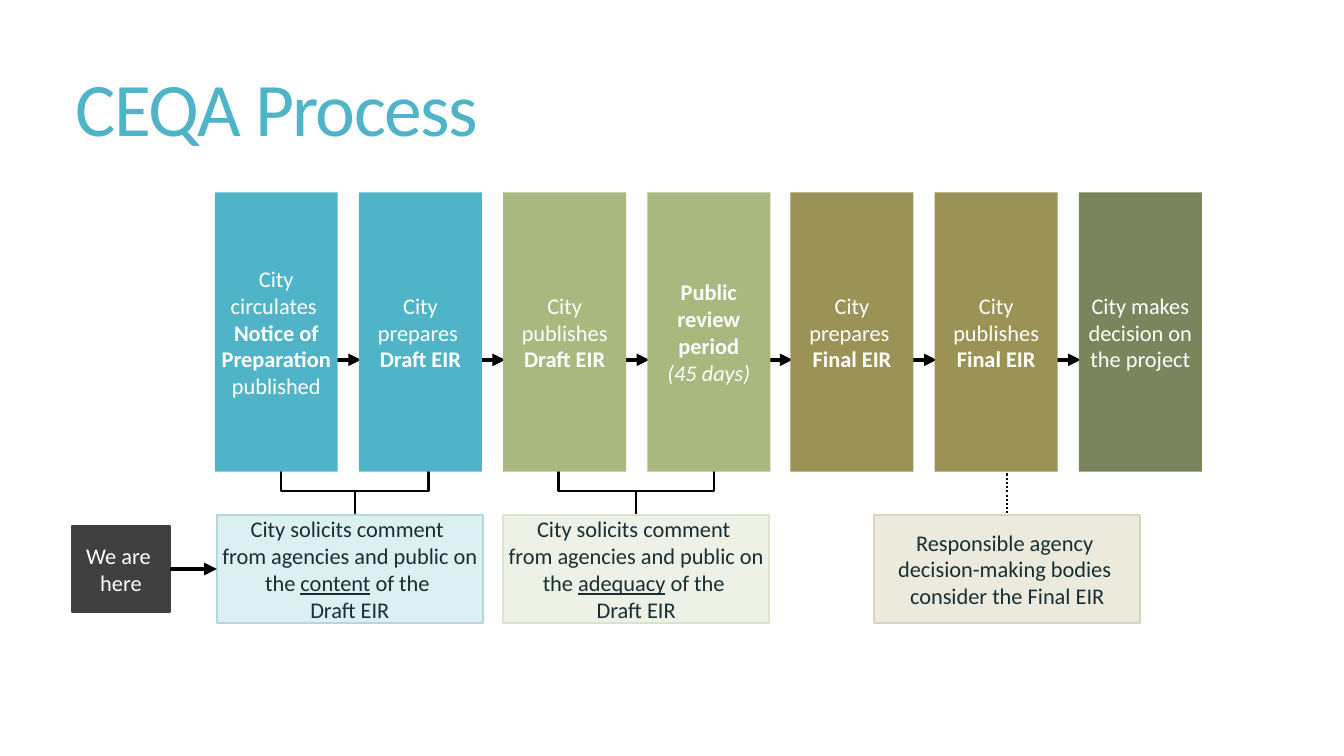
from lxml import etree
from pptx import Presentation
from pptx.dml.color import RGBColor
from pptx.enum.dml import MSO_LINE
from pptx.enum.shapes import MSO_CONNECTOR, MSO_SHAPE
from pptx.enum.text import MSO_ANCHOR, MSO_AUTO_SIZE, PP_ALIGN
from pptx.oxml.ns import qn
from pptx.util import Emu, Pt

RECT = MSO_SHAPE.RECTANGLE
STRAIGHT, ELBOW = MSO_CONNECTOR.STRAIGHT, MSO_CONNECTOR.ELBOW
DOTS = MSO_LINE.ROUND_DOT
MIDDLE = MSO_ANCHOR.MIDDLE
LEFT, CENTER = PP_ALIGN.LEFT, PP_ALIGN.CENTER
NO_FIT = MSO_AUTO_SIZE.NONE
LEFT_SIDE, RIGHT_SIDE = 1, 3

SCALE = 9144  # 100 px to the inch
FONT = "Calibri"
WHITE, BLACK, INK, DARK = "FFFFFF", "000000", "162F33", "404040"
TEAL, GREEN, OLIVE, MOSS = "50B4C8", "A8B97F", "9B9256", "7A855D"

STEP_X, STEP_Y, STEP_W, STEP_H = 213, 191, 122, 277
STEP_END = 1070
ARROW_Y = 357
NOTE_Y, NOTE_W, NOTE_H = 511, 264, 107

# Each step: fill, side inset, paragraphs made of (text, style) runs
STEPS = [
    (TEAL, 0, [[("City circulates \n", ""), ("Notice of Preparation ", "b"),
                ("published", "")]]),
    (TEAL, 5, [[("City prepares ", "")], [("Draft EIR", "b")]]),
    (GREEN, 5, [[("City publishes ", ""), ("Draft EIR", "b")]]),
    (GREEN, 5, [[("Public review period\n", "b"), ("(45 days)", "i")]]),
    (OLIVE, 5, [[("City prepares ", "")], [("Final EIR", "b")]]),
    (OLIVE, 5, [[("City publishes ", ""), ("Final EIR", "b")]]),
    (MOSS, 5, [[("City makes decision on the project", "")]]),
]
# Each bracket: left foot, stem, right foot
BRACKETS = [(279, 352, 425), (554, 631, 708)]


def px(n):
    return Emu(round(n * SCALE))


def color(code):
    return RGBColor.from_string(code)


def write(frame, paras, size=16, ink=WHITE, align=CENTER, inset=(0, 5, 0, 5),
          lead=None, track=None):
    """Fill a text frame; inset is left, top, right, bottom."""
    frame.word_wrap = True
    frame.auto_size = NO_FIT
    frame.vertical_anchor = MIDDLE
    (frame.margin_left, frame.margin_top,
     frame.margin_right, frame.margin_bottom) = map(px, inset)
    for i, runs in enumerate(paras):
        para = frame.add_paragraph() if i else frame.paragraphs[0]
        para.alignment = align
        if lead:
            para.line_spacing = lead
        for text, style in runs:
            for j, line in enumerate(text.split("\n")):
                if j:
                    para.add_line_break()
                if not line:
                    continue
                run = para.add_run()
                run.text = line
                font = run.font
                font.name, font.size = FONT, Pt(size)
                font.color.rgb = color(ink)
                font.bold, font.italic = "b" in style, "i" in style
                font.underline = "u" in style
                if track:
                    run._r.get_or_add_rPr().set("spc", str(track))


def add_box(slide, x, y, w, h, paras, fill, edge=None, **form):
    box = slide.shapes.add_shape(RECT, px(x), px(y), px(w), px(h))
    box.shadow.inherit = False
    box.fill.solid()
    box.fill.fore_color.rgb = color(fill)
    if edge:
        box.line.color.rgb = color(edge)
        box.line.width = Pt(1.5)
    else:
        box.line.fill.background()
    write(box.text_frame, paras, **form)
    return box


def add_line(slide, x1, y1, x2, y2, width=1.5, kind=STRAIGHT, dash=None,
             head=False):
    line = slide.shapes.add_connector(kind, px(x1), px(y1), px(x2), px(y2))
    line.line.color.rgb = color(BLACK)
    line.line.width = Pt(width)
    if dash:
        line.line.dash_style = dash
    if head:
        etree.SubElement(line.line._get_or_add_ln(), qn("a:tailEnd"),
                         type="triangle")
    etree.SubElement(line._element.spPr, qn("a:effectLst"))
    return line


def add_drop(slide, x1, x2, top=424, base=551):
    """Draw an elbow that leaves x1 downward and reaches x2 from above."""
    mid_x, mid_y = (x1 + x2) / 2, (top + base) / 2
    half, skew = (base - top) / 2, (x1 - x2) / 2
    drop = add_line(slide, mid_x - half, mid_y - skew,
                    mid_x + half, mid_y + skew, kind=ELBOW)
    drop._element.spPr.find(qn("a:xfrm")).set("rot", "5400000")


def add_note(slide, x, paras, fill, edge):
    return add_box(slide, x, NOTE_Y, NOTE_W, NOTE_H, paras, fill, edge,
                   ink=INK)


def solicit(topic):
    return [[("City solicits comment \nfrom agencies and public on the ", ""),
             (topic, "u"), (" of the ", "")], [("Draft EIR", "")]]


def add_title(slide, text):
    title = slide.shapes.title
    title.left, title.top = px(65), px(39)
    title.width, title.height = px(1178), px(152)
    write(title.text_frame, [[(text, "")]], size=54, ink=TEAL, align=LEFT,
          inset=(10, 5, 10, 10), lead=0.85, track=-120)


def add_steps(slide):
    pitch = (STEP_END - STEP_X) / (len(STEPS) - 1)
    lefts = [round(STEP_X + i * pitch) for i in range(len(STEPS))]
    for x, after in zip(lefts, lefts[1:]):
        add_line(slide, x + 109, ARROW_Y, after + 2, ARROW_Y, width=3,
                 head=True)
    for x, (fill, side, paras) in zip(lefts, STEPS):
        add_box(slide, x, STEP_Y, STEP_W, STEP_H, paras, fill,
                inset=(side, 5, side, 5))


def main():
    deck = Presentation()
    deck.slide_width, deck.slide_height = px(1333), px(750)
    slide = deck.slides.add_slide(deck.slide_layouts[5])
    add_title(slide, "CEQA Process")

    add_line(slide, 999, 572, 999, 361, dash=DOTS)
    for left, stem, right in BRACKETS:
        add_drop(slide, left, stem)
        add_drop(slide, right, stem)
    add_steps(slide)

    add_note(slide, 867, [[("Responsible agency \ndecision-making bodies \n"
                            "consider the Final EIR", "")]],
             "ECEADC", "D9D5BA")
    scope = add_note(slide, 215, solicit("content"), "DCF0F4", "B3D8DE")
    add_note(slide, 499, solicit("adequacy"), "EEF1E5", "DCE3CC")
    here = add_box(slide, 71, 522, 98, 85, [[("We are ", "")], [("here", "")]],
                   DARK, DARK)
    link = add_line(slide, 169, 565, 215, 565, width=3, head=True)
    link.begin_connect(here, RIGHT_SIDE)
    link.end_connect(scope, LEFT_SIDE)
    deck.save("out.pptx")


if __name__ == "__main__":
    main()
